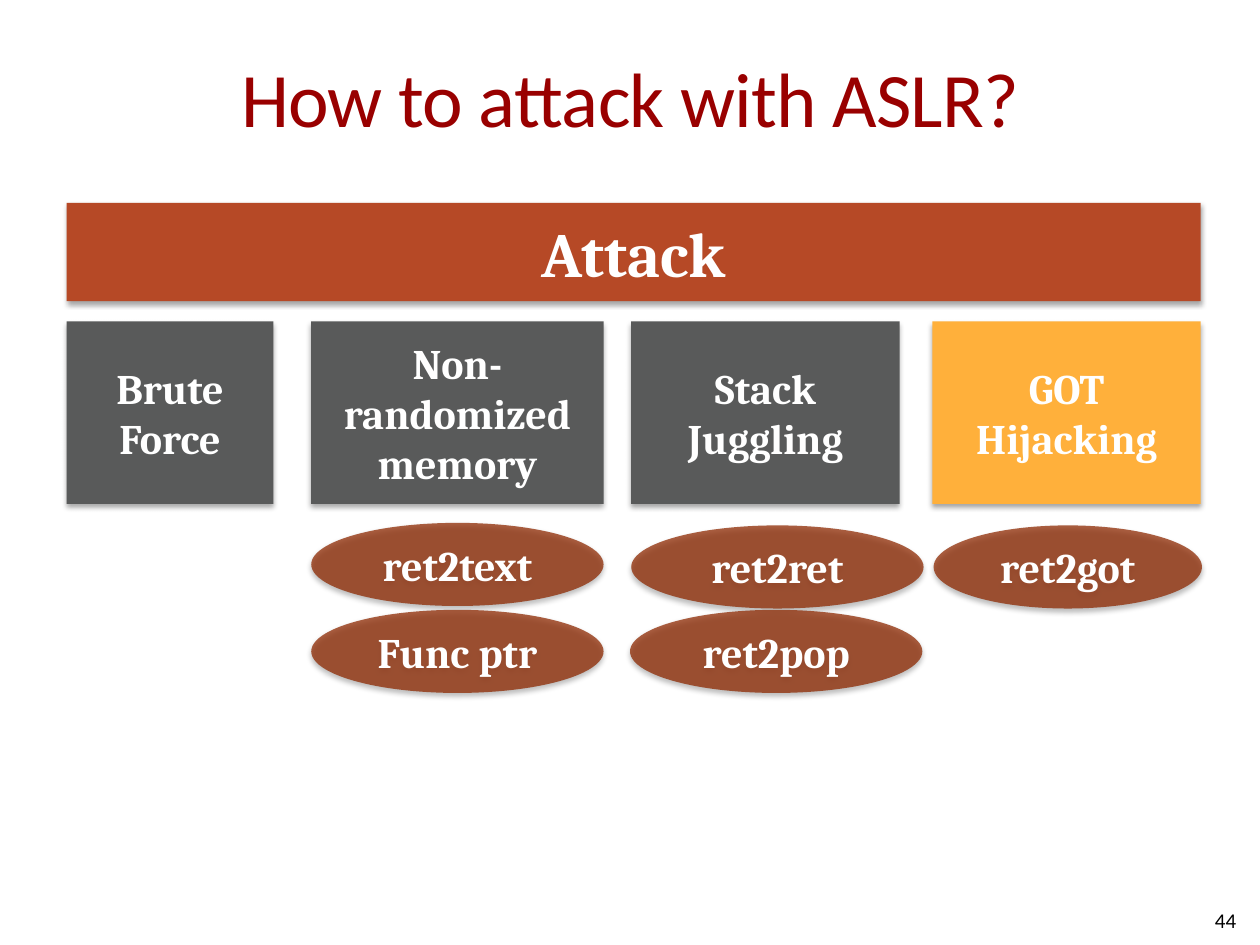
from dataclasses import dataclass

from pptx import Presentation
from pptx.dml.color import RGBColor
from pptx.enum.shapes import MSO_SHAPE as Preset
from pptx.enum.text import MSO_ANCHOR as Anchor, PP_ALIGN as Align
from pptx.oxml import parse_xml
from pptx.oxml.ns import nsdecls, qn
from pptx.util import Inches, Pt


@dataclass(frozen=True)
class Theme:
    title: str = "990000"
    attack: str = "B64926"
    covered: str = "595A5A"
    current: str = "FFB03B"
    technique: str = "8E2800"
    light: str = "FFFFFF"
    dark: str = "000000"
    title_size: int = 44
    attack_size: int = 36
    label_size: int = 24
    number_size: int = 12
    sans: str = "Calibri"
    serif: str = "Cambria"


THEME = Theme()
SHADOW = f"""<a:effectLst {nsdecls("a")}>
  <a:outerShdw blurRad="{Pt(3.1)}" dist="{Pt(1.8)}" dir="5400000" rotWithShape="0">
    <a:srgbClr val="{THEME.dark}"><a:alpha val="35000"/></a:srgbClr>
  </a:outerShdw>
</a:effectLst>"""


def write(box, text, size, color, font, align=Align.CENTER, bold=False):
    frame = box.text_frame
    frame.word_wrap = True
    frame.vertical_anchor = Anchor.MIDDLE
    frame.text = text
    for paragraph in frame.paragraphs:
        paragraph.alignment = align
        for run in paragraph.runs:
            run.font.size = Pt(size)
            run.font.name = font
            run.font.bold = bold
            run.font.color.rgb = RGBColor.from_string(color)


def add_block(preset, left, top, width, height, fill, text, size=THEME.label_size):
    """Add a filled, softly shadowed shape with a bold serif label."""
    block = slide.shapes.add_shape(
        preset, Inches(left), Inches(top), Inches(width), Inches(height))
    block.fill.solid()
    block.fill.fore_color.rgb = RGBColor.from_string(fill)
    block.line.fill.background()
    block.shadow.inherit = False
    properties = block._element.spPr
    properties.replace(properties.find(qn("a:effectLst")), parse_xml(SHADOW))
    write(block, text, size, THEME.light, THEME.serif, bold=True)
    return block


deck = Presentation()
deck.slide_width, deck.slide_height = Inches(10), Inches(7.5)
slide = deck.slides.add_slide(deck.slide_layouts[6])

title = slide.shapes.add_textbox(Inches(0.5), Inches(0.29), Inches(9), Inches(0.96))
write(title, "How to attack with ASLR?", THEME.title_size, THEME.title, THEME.sans)
title.text_frame.margin_left = title.text_frame.margin_right = 0
title.text_frame.paragraphs[0].runs[0].font._element.set("spc", "-50")

add_block(Preset.RECTANGLE, 0.53, 1.61, 9, 0.78, THEME.attack, "Attack", THEME.attack_size)

# Each attack: label, left, width, fill
attacks = [
    ("Brute Force", 0.53, 1.64, THEME.covered),
    ("Non-randomized memory", 2.47, 2.32, THEME.covered),
    ("Stack Juggling", 5.01, 2.13, THEME.covered),
    ("GOT\nHijacking", 7.4, 2.13, THEME.current),
]
for label, left, width, fill in attacks:
    add_block(Preset.RECTANGLE, left, 2.55, width, 1.45, fill, label)

# Each technique: label, left, top, width
techniques = [
    ("ret2text", 2.47, 4.15, 2.32),
    ("Func ptr", 2.47, 4.84, 2.32),
    ("ret2ret", 5.01, 4.17, 2.32),
    ("ret2pop", 5, 4.84, 2.32),
    ("ret2got", 7.41, 4.17, 2.13),
]
for label, left, top, width in techniques:
    oval = add_block(Preset.OVAL, left, top, width, 0.66, THEME.technique, label)
    tint = oval._element.spPr.find(qn("a:solidFill")).find(qn("a:srgbClr"))
    tint.append(parse_xml(f'<a:alpha {nsdecls("a")} val="74000"/>'))

page_number = slide.shapes.add_textbox(Inches(7.58), Inches(7.1), Inches(2.33), Inches(0.4))
write(page_number, "44", THEME.number_size, THEME.dark, THEME.sans, Align.RIGHT)

deck.save("out.pptx")
